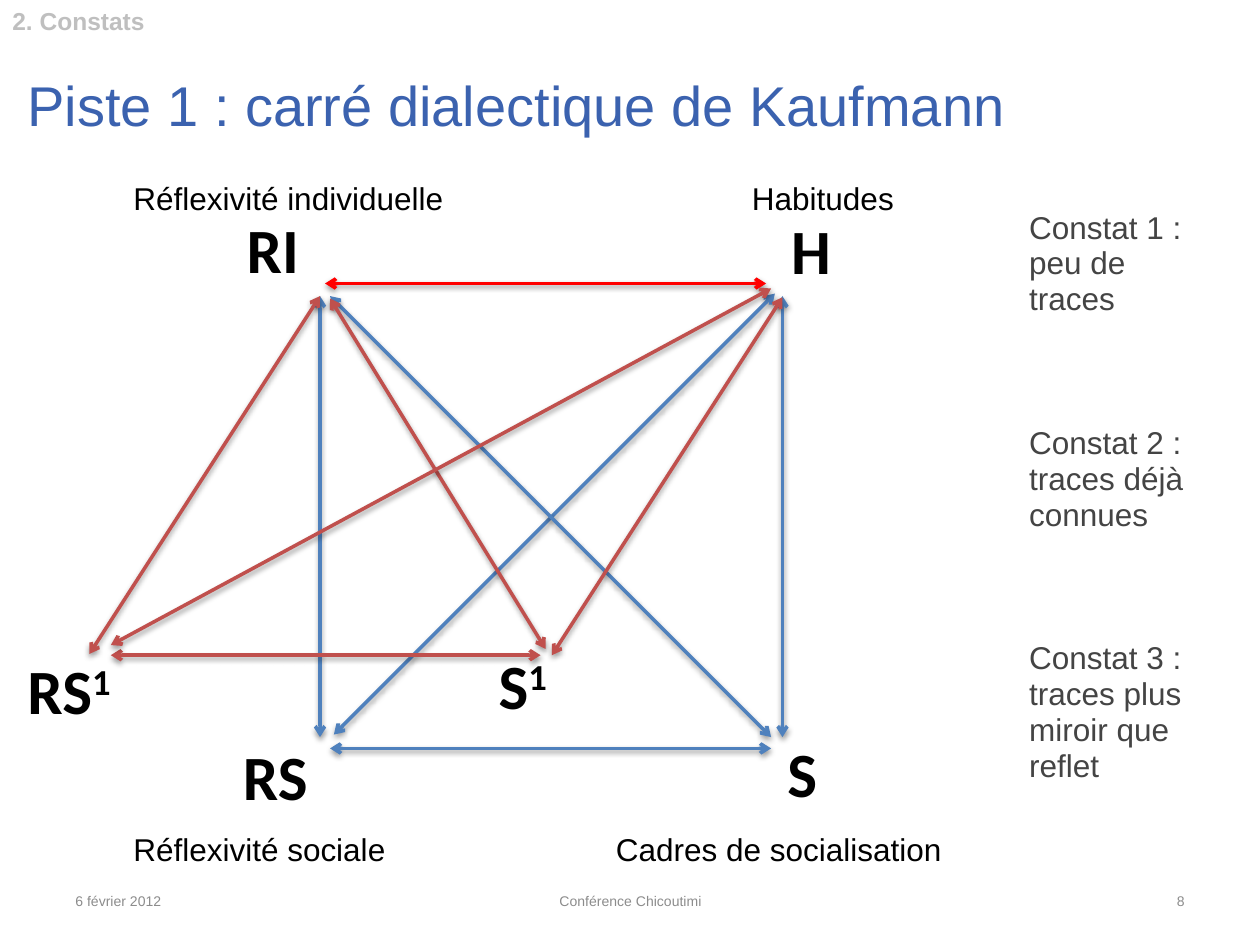
from dataclasses import dataclass

from lxml.etree import SubElement
from pptx import Presentation
from pptx.dml.color import RGBColor
from pptx.enum.shapes import MSO_CONNECTOR
from pptx.enum.text import MSO_ANCHOR, PP_ALIGN
from pptx.oxml.ns import qn
from pptx.util import Inches, Pt


@dataclass(frozen=True)
class Theme:
    sans: str = "Arial"
    node_font: str = "Calibri"
    title: str = "3B62AF"
    ink: str = "000000"
    note: str = "444444"
    footer: str = "8C8C8C"
    section: str = "BFBFBF"
    blue: str = "4F81BD"
    brick: str = "C0504D"
    red: str = "FF0000"
    title_size: int = 32
    node_size: int = 36
    body_size: int = 18
    section_size: int = 14
    footer_size: int = 8
    line_width: int = 2


THEME = Theme()
COLS, ROWS = 100, 75
SLIDE_W, SLIDE_H = Inches(10), Inches(7.5)

LEFT, RIGHT = 25.4, 62.1
INNER_LEFT, INNER_RIGHT = 26.2, 61.2
TOP, BOTTOM = 23.5, 58.5
UPPER, LOWER = 22.5, 59.4
FRONT_LEFT, FRONT_Y = 8.8, 52

ARROWS = {
    THEME.blue: [
        (26.5, 58.3, 61.5, 23.3),
        (INNER_LEFT, LOWER, INNER_RIGHT, LOWER),
        (LEFT, BOTTOM, LEFT, TOP),
        (RIGHT, BOTTOM, RIGHT, TOP),
        (INNER_RIGHT, BOTTOM, INNER_LEFT, TOP),
    ],
    THEME.red: [(25.8, UPPER, 60.8, UPPER)],
    THEME.brick: [
        (LEFT, TOP, 7.1, 51.9),
        (RIGHT, 23.6, 43.8, FRONT_Y),
        (INNER_LEFT, 23.7, 43.3, 51.5),
        (42.9, FRONT_Y, FRONT_LEFT, FRONT_Y),
        (INNER_RIGHT, 22.9, FRONT_LEFT, 51.2),
    ],
}

NODES = [
    ("H", "", 61.8, 16.3),
    ("RS", "", 18.3, 58),
    ("RI", "", 18.6, 16.2),
    ("S", "", 61.5, 57.8),
    ("RS", "1", 1.2, 51.2),
    ("S", "1", 38.6, 50.8),
]

CAPTIONS = [
    ("Réflexivité individuelle", 9.6, 13.7, 26.9),
    ("Habitudes", 58.7, 13.7, 13.4),
    ("Réflexivité sociale", 9.6, 65.4, 22.2),
    ("Cadres de socialisation", 47.9, 65.4, 28.1),
]

FINDINGS = [
    "Constat 1 : peu de traces",
    "Constat 2 : traces déjà connues",
    "Constat 3 : traces plus miroir que reflet",
]

FOOTERS = [
    ("6 février 2012", 5, 23.3, PP_ALIGN.LEFT),
    ("Conférence Chicoutimi", 34.2, 31.7, PP_ALIGN.CENTER),
    ("8", 71.7, 23.3, PP_ALIGN.RIGHT),
]


def col(n):
    return round(SLIDE_W * n / COLS)


def row(n):
    return round(SLIDE_H * n / ROWS)


def add_text(slide, lines, x, y, w, h, size, color, font=THEME.sans,
             bold=False, align=PP_ALIGN.LEFT, anchor=MSO_ANCHOR.TOP, wrap=True):
    tf = slide.shapes.add_textbox(col(x), row(y), col(w), row(h)).text_frame
    tf.word_wrap = wrap
    tf.vertical_anchor = anchor
    for i, line in enumerate(lines):
        p = tf.paragraphs[0] if i == 0 else tf.add_paragraph()
        p.text = line
        p.alignment = align
        p.font.name = font
        p.font.size = Pt(size)
        p.font.bold = bold
        p.font.color.rgb = RGBColor.from_string(color)
    return tf


def add_arrow(slide, color, x1, y1, x2, y2):
    cn = slide.shapes.add_connector(
        MSO_CONNECTOR.STRAIGHT, col(x1), row(y1), col(x2), row(y2))
    cn.line.color.rgb = RGBColor.from_string(color)
    cn.line.width = Pt(THEME.line_width)
    ln = cn.line._get_or_add_ln()
    for end in ("a:headEnd", "a:tailEnd"):
        SubElement(ln, qn(end), type="arrow")
    effects = SubElement(cn._element.spPr, qn("a:effectLst"))
    shadow = SubElement(effects, qn("a:outerShdw"), blurRad="40000",
                        dist="20000", dir="5400000", rotWithShape="0")
    black = SubElement(shadow, qn("a:srgbClr"), val=THEME.ink)
    SubElement(black, qn("a:alpha"), val="38000")


def add_node(slide, name, exponent, x, y):
    tf = add_text(slide, [name], x, y, 13, 7.1, THEME.node_size, THEME.ink,
                  font=THEME.node_font, bold=True)
    if exponent:
        r = tf.paragraphs[0].add_run()
        r.text = exponent
        r._r.get_or_add_rPr().set("baseline", "30000")


def add_findings(slide):
    tf = add_text(slide, FINDINGS, 80.7, 16.2, 14.3, 50,
                  THEME.body_size, THEME.note)
    for i, p in enumerate(tf.paragraphs):
        p.line_spacing = 0.95
        if i:
            p.space_before = Pt(61.5)


def main():
    prs = Presentation()
    prs.slide_width, prs.slide_height = SLIDE_W, SLIDE_H
    slide = prs.slides.add_slide(prs.slide_layouts[6])

    for text, x, w, align in FOOTERS:
        add_text(slide, [text], x, 69.5, w, 4, THEME.footer_size, THEME.footer,
                 align=align, anchor=MSO_ANCHOR.MIDDLE)
    add_text(slide, ["Piste 1 : carré dialectique de Kaufmann"],
             1.2, 5.1, 79.9, 7, THEME.title_size, THEME.title)
    add_findings(slide)
    for color, arrows in ARROWS.items():
        for ends in arrows:
            add_arrow(slide, color, *ends)
    for node in NODES:
        add_node(slide, *node)
    for text, x, y, w in CAPTIONS:
        add_text(slide, [text], x, y, w, 4, THEME.body_size, THEME.ink,
                 wrap=False)
    add_text(slide, ["2. Constats"], 0, 0, 29, 3.4, THEME.section_size,
             THEME.section, bold=True)

    prs.save("out.pptx")


if __name__ == "__main__":
    main()
